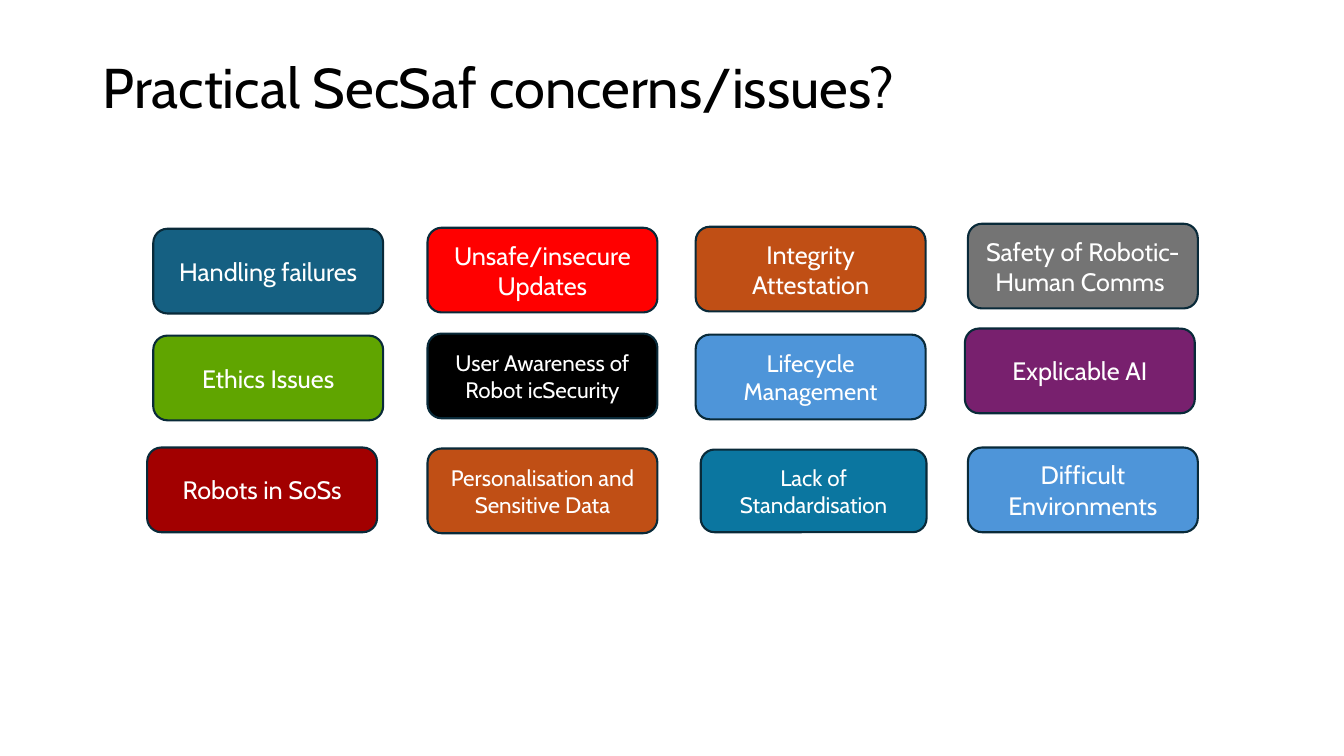
from pptx import Presentation
from pptx.dml.color import RGBColor
from pptx.enum.shapes import MSO_SHAPE
from pptx.enum.text import MSO_ANCHOR, PP_ALIGN
from pptx.util import Inches, Pt

ROUNDED = MSO_SHAPE.ROUNDED_RECTANGLE
MIDDLE = MSO_ANCHOR.MIDDLE
LEFT, CENTER = PP_ALIGN.LEFT, PP_ALIGN.CENTER

BLACK = RGBColor(0x00, 0x00, 0x00)
WHITE = RGBColor(0xFF, 0xFF, 0xFF)
OUTLINE = RGBColor(0x09, 0x2A, 0x39)
NAVY = RGBColor(0x15, 0x60, 0x82)
RED = RGBColor(0xFF, 0x00, 0x00)
ORANGE = RGBColor(0xC0, 0x4F, 0x15)
GREY = RGBColor(0x74, 0x74, 0x74)
GREEN = RGBColor(0x60, 0xA5, 0x00)
BLUE = RGBColor(0x4E, 0x95, 0xD9)
PURPLE = RGBColor(0x78, 0x20, 0x6E)
CRIMSON = RGBColor(0xA2, 0x00, 0x00)
TEAL = RGBColor(0x0B, 0x76, 0xA0)

FONT = "Cabin"
TITLE = "Practical SecSaf concerns/issues?"
CARD_SIZE = (2.28, 0.84)
SMALL_CARD_SIZE = (2.24, 0.82)

CONCERNS = [
    ("Handling failures", 1.52, 2.27, CARD_SIZE, NAVY, 18),
    ("Unsafe/insecure\nUpdates", 4.24, 2.26, CARD_SIZE, RED, 18),
    ("Integrity Attestation", 6.9, 2.25, CARD_SIZE, ORANGE, 18),
    ("Safety of Robotic-Human Comms ", 9.6, 2.22, CARD_SIZE, GREY, 18),
    ("Ethics Issues", 1.52, 3.33, CARD_SIZE, GREEN, 18),
    ("User Awareness of Robot icSecurity", 4.24, 3.31, CARD_SIZE, BLACK, 16),
    ("Lifecycle Management", 6.9, 3.32, CARD_SIZE, BLUE, 17),
    ("Explicable AI", 9.57, 3.26, CARD_SIZE, PURPLE, 18),
    ("Robots in SoSs", 1.46, 4.44, CARD_SIZE, CRIMSON, 18),
    ("Personalisation and Sensitive Data", 4.24, 4.45, CARD_SIZE, ORANGE, 16),
    ("Lack of Standardisation", 6.95, 4.46, SMALL_CARD_SIZE, TEAL, 16),
    ("Difficult Environments", 9.6, 4.44, CARD_SIZE, BLUE, 18),
]


def write_text(box, text, size, color, align, line_spacing=1.0):
    frame = box.text_frame
    frame.word_wrap = True
    frame.vertical_anchor = MIDDLE
    para = frame.paragraphs[0]
    para.text = text
    para.alignment = align
    para.line_spacing = line_spacing
    for span in para.runs:
        span.font.name = FONT
        span.font.size = Pt(size)
        span.font.color.rgb = color


def add_card(page, text, left, top, card_size, fill, text_size):
    width, height = card_size
    card = page.shapes.add_shape(
        ROUNDED, Inches(left), Inches(top), Inches(width), Inches(height))
    card.shadow.inherit = False
    card.fill.solid()
    card.fill.fore_color.rgb = fill
    card.line.color.rgb = OUTLINE
    card.line.width = Pt(1.5)
    write_text(card, text, text_size, WHITE, CENTER)


def main():
    deck = Presentation()
    deck.slide_width, deck.slide_height = Inches(13.33), Inches(7.5)
    page = deck.slides.add_slide(deck.slide_layouts[6])
    title = page.shapes.add_textbox(
        Inches(0.92), Inches(0.4), Inches(12.41), Inches(0.99))
    write_text(title, TITLE, 40, BLACK, LEFT, line_spacing=0.9)
    for concern in CONCERNS:
        add_card(page, *concern)
    deck.save("out.pptx")


if __name__ == "__main__":
    main()
